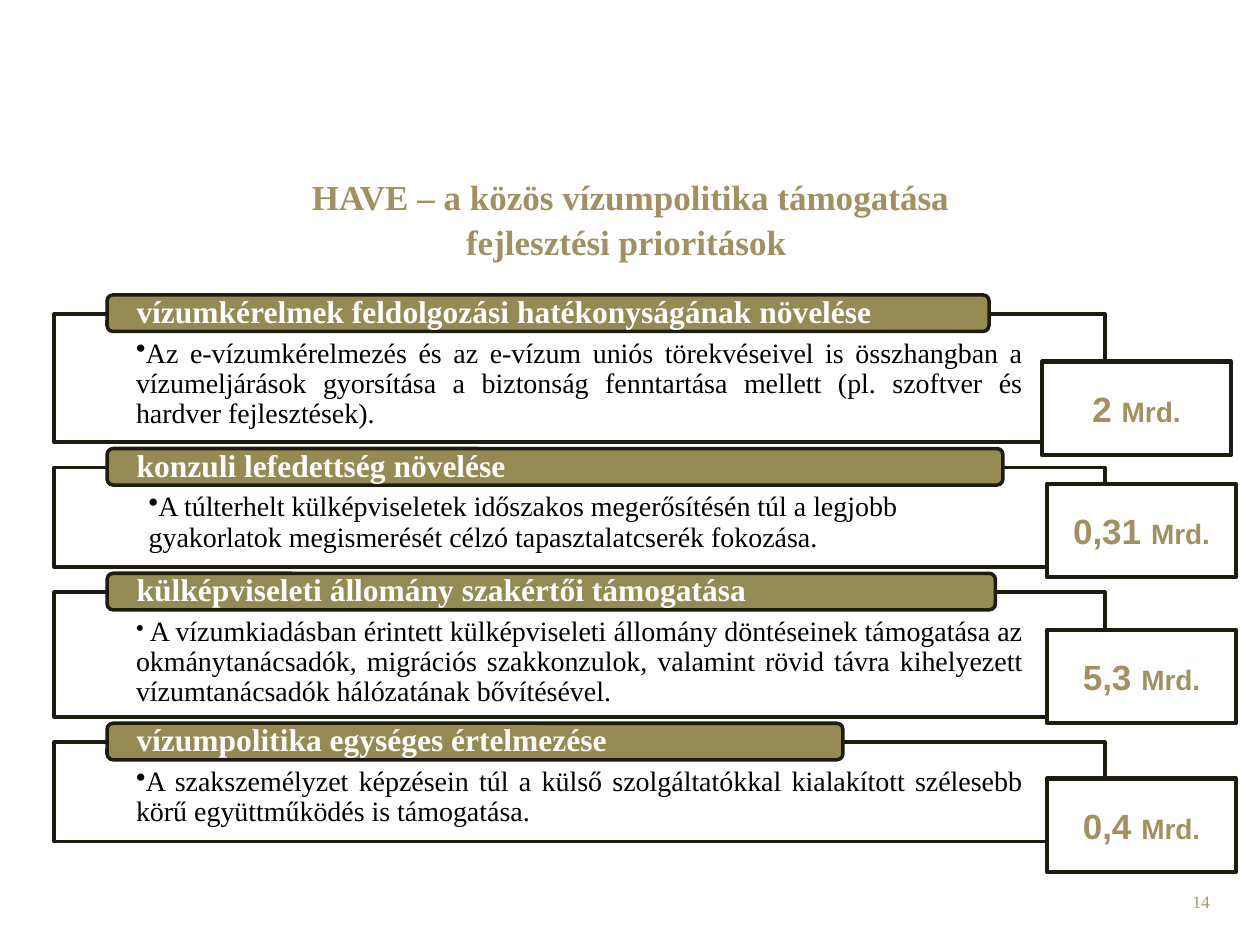
from dataclasses import dataclass

from lxml.etree import SubElement
from pptx import Presentation
from pptx.dml.color import RGBColor
from pptx.enum.shapes import MSO_SHAPE
from pptx.enum.text import MSO_ANCHOR, MSO_AUTO_SIZE, PP_ALIGN
from pptx.oxml.ns import qn
from pptx.util import Inches, Pt


@dataclass(frozen=True)
class Theme:
    serif: str = "Times New Roman"
    sans: str = "Arial"
    gold: str = "A29061"
    pale_gold: str = "A69765"
    olive: str = "948A54"
    outline: str = "1E1C11"
    white: str = "FFFFFF"
    black: str = "000000"
    title_size: int = 20
    header_size: int = 18
    body_size: int = 16
    lead_size: int = 13
    number_size: int = 10


@dataclass(frozen=True)
class Priority:
    header: str
    header_width: float
    body: str
    height: float
    amount: str
    amount_left: float
    amount_top: float
    align: PP_ALIGN = PP_ALIGN.JUSTIFY
    indent: float = 0
    lead: str = ""


PRIORITIES = [
    Priority("vízumkérelmek feldolgozási hatékonyságának növelése", 7,
             "Az e-vízumkérelmezés és az e-vízum uniós törekvéseivel is összhangban "
             "a vízumeljárások gyorsítása a biztonság fenntartása mellett "
             "(pl. szoftver és hardver fejlesztések).",
             1.02, "2 ", 8.27, 2.87),
    Priority("konzuli lefedettség növelése", 7.11,
             "A túlterhelt külképviseletek időszakos megerősítésén túl a legjobb "
             "gyakorlatok megismerését célzó tapasztalatcserék fokozása.",
             0.79, "0,31 ", 8.31, 3.84, align=PP_ALIGN.LEFT, indent=0.1),
    Priority("külképviseleti állomány szakértői támogatása", 7.05,
             "A vízumkiadásban érintett külképviseleti állomány döntéseinek "
             "támogatása az okmánytanácsadók, migrációs szakkonzulok, valamint "
             "rövid távra kihelyezett vízumtanácsadók hálózatának bővítésével.",
             0.99, "5,3 ", 8.31, 5, lead=" "),
    Priority("vízumpolitika egységes értelmezése", 5.84,
             "A szakszemélyzet képzésein túl a külső szolgáltatókkal kialakított "
             "szélesebb körű együttműködés is támogatása.",
             0.79, "0,4 ", 8.31, 6.18),
]
FIRST_FRAME_TOP = 2.49
FRAME_GAP = 0.2


def write_text(text_frame, paragraphs, *, font, color, bold=False,
               align=PP_ALIGN.LEFT, anchor=MSO_ANCHOR.TOP, insets=(0, 0, 0, 0),
               line_spacing=1.0, bullet=False, indent=0):
    """Fill a frame; each paragraph is a list of (text, size) runs."""
    text_frame.word_wrap = True
    text_frame.auto_size = MSO_AUTO_SIZE.NONE
    text_frame.vertical_anchor = anchor
    (text_frame.margin_left, text_frame.margin_top,
     text_frame.margin_right, text_frame.margin_bottom) = map(Inches, insets)
    for index, runs in enumerate(paragraphs):
        paragraph = text_frame.paragraphs[0] if index == 0 else text_frame.add_paragraph()
        if bullet:
            properties = paragraph._p.get_or_add_pPr()
            properties.set("marL", str(Inches(indent)))
            properties.set("indent", "0")
            SubElement(properties, qn("a:buChar"), char="•")
        paragraph.alignment = align
        paragraph.line_spacing = line_spacing
        paragraph.space_before = Pt(0)
        for text, size in runs:
            run = paragraph.add_run()
            run.text = text
            run.font.name = font
            run.font.size = Pt(size)
            run.font.bold = bold
            run.font.color.rgb = RGBColor.from_string(color)


class SlideBuilder:
    def __init__(self, slide, theme):
        self.slide = slide
        self.theme = theme

    def box(self, kind, left, top, width, height, *, fill=None, line_width=2):
        shape = self.slide.shapes.add_shape(
            kind, Inches(left), Inches(top), Inches(width), Inches(height))
        shape.shadow.inherit = False
        if fill:
            shape.fill.solid()
            shape.fill.fore_color.rgb = RGBColor.from_string(fill)
        else:
            shape.fill.background()
        shape.line.color.rgb = RGBColor.from_string(self.theme.outline)
        shape.line.width = Pt(line_width)
        return shape

    def title(self, lines):
        shape = self.slide.shapes.title
        shape.left, shape.top = Inches(0.79), Inches(1.38)
        shape.width, shape.height = Inches(8.43), Inches(0.47)
        write_text(shape.text_frame, [[(line, self.theme.title_size)] for line in lines],
                   font=self.theme.serif, color=self.theme.gold, bold=True,
                   align=PP_ALIGN.CENTER, line_spacing=1.05)

    def description(self, priority, top):
        shape = self.box(MSO_SHAPE.RECTANGLE, 0.43, top, 8.34, priority.height)
        runs = [(priority.body, self.theme.body_size)]
        if priority.lead:
            runs.insert(0, (priority.lead, self.theme.lead_size))
        write_text(shape.text_frame, [runs], font=self.theme.serif,
                   color=self.theme.black, align=priority.align,
                   insets=(0.65, 0.2, 0.65, 0.1), line_spacing=0.9,
                   bullet=True, indent=priority.indent)

    def header(self, priority, frame_top):
        shape = self.box(MSO_SHAPE.ROUNDED_RECTANGLE, 0.85, frame_top - 0.15,
                         priority.header_width, 0.29, fill=self.theme.olive)
        write_text(shape.text_frame, [[(priority.header, self.theme.header_size)]],
                   font=self.theme.serif, color=self.theme.white, bold=True,
                   anchor=MSO_ANCHOR.MIDDLE, insets=(0.22, 0, 0.22, 0),
                   line_spacing=0.9)

    def amount(self, priority):
        shape = self.box(MSO_SHAPE.RECTANGLE, priority.amount_left, priority.amount_top,
                         1.5, 0.74, fill=self.theme.white, line_width=2.5)
        write_text(shape.text_frame,
                   [[(priority.amount, self.theme.title_size),
                     ("Mrd.", self.theme.body_size)]],
                   font=self.theme.sans, color=self.theme.gold, bold=True,
                   align=PP_ALIGN.CENTER, anchor=MSO_ANCHOR.MIDDLE)

    def slide_number(self, number):
        shape = self.slide.shapes.add_textbox(
            Inches(7.37), Inches(7.02), Inches(2.33), Inches(0.4))
        write_text(shape.text_frame, [[(number, self.theme.number_size)]],
                   font=self.theme.serif, color=self.theme.pale_gold,
                   align=PP_ALIGN.RIGHT, insets=(0.1, 0.05, 0.1, 0.05))


def main():
    presentation = Presentation()
    presentation.slide_width, presentation.slide_height = Inches(10), Inches(7.5)
    slide = presentation.slides.add_slide(presentation.slide_layouts.get_by_name("Title Only"))
    builder = SlideBuilder(slide, Theme())
    builder.title(["HAVE – a közös vízumpolitika támogatása", "fejlesztési prioritások "])
    top = FIRST_FRAME_TOP
    for priority in PRIORITIES:
        builder.description(priority, top)
        builder.header(priority, top)
        builder.amount(priority)
        top += priority.height + FRAME_GAP
    builder.slide_number("14")
    presentation.save("out.pptx")


if __name__ == "__main__":
    main()
